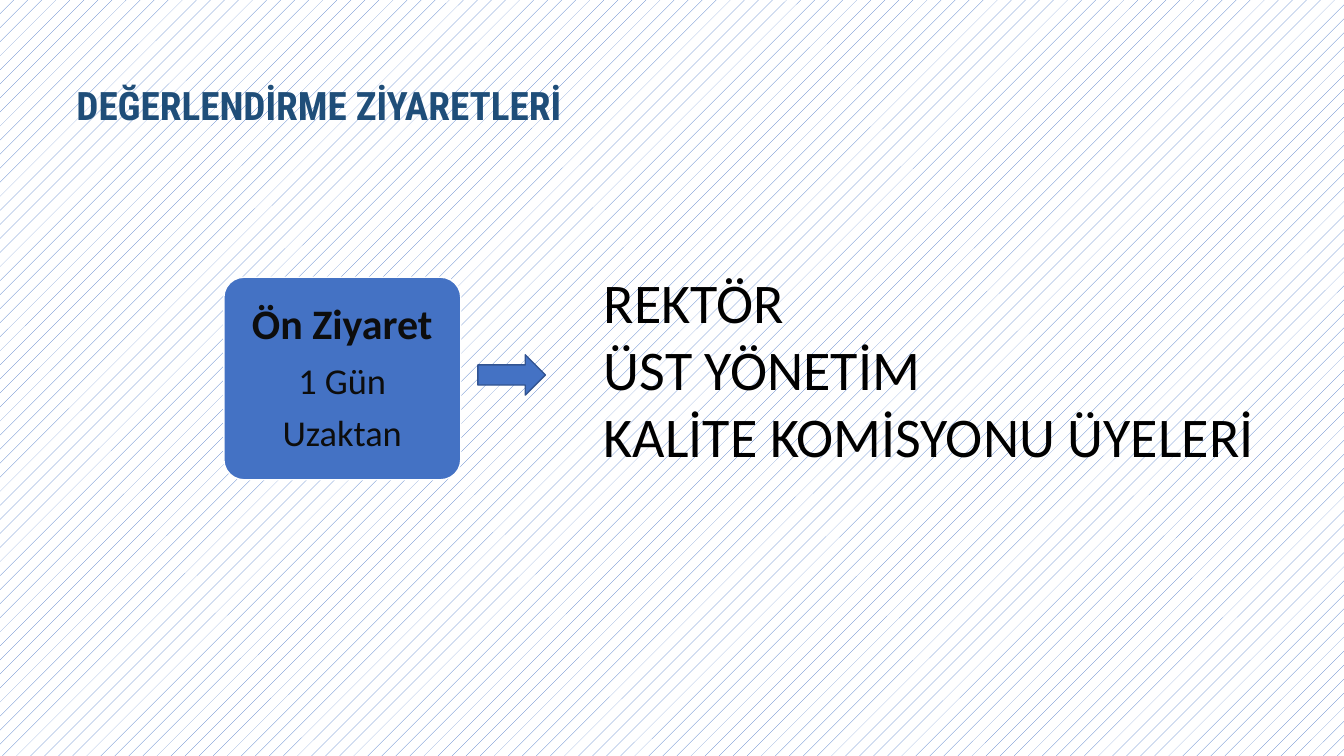
from pptx import Presentation
from pptx import util as u
from pptx.dml.color import RGBColor
from pptx.enum import dml, shapes, text

BLUE, WHITE, BLACK = "4472C4", "FFFFFF", "000000"
NAVY, EDGE, INK = "1F4E79", "325491", "0D0D0D"

TITLE = [("DEĞERLENDİRME ZİYARETLERİ", 28, True)]
VISIT = [("Ön Ziyaret", 30, True), ("1 Gün", 26, False), ("Uzaktan", 26, False)]
ATTENDEES = [(name, 40, False) for name in
             ("REKTÖR", "ÜST YÖNETİM", "KALİTE KOMİSYONU ÜYELERİ")]

TITLE_BOX = (0.66, 0.76, 7.44, 0.57)
VISIT_BOX = (2.22, 2.75, 2.35, 2.01)
ATTENDEES_BOX = (5.89, 2.6, 6.98, 2.12)
ARROW_BOX = (4.74, 3.52, 0.67, 0.4)


def rgb(value):
    return RGBColor.from_string(value)


def inches(box):
    return [u.Inches(length) for length in box]


def write(frame, lines, font, color):
    frame.word_wrap = True
    frame.text = "\n".join(line for line, _, _ in lines)
    for paragraph, (_, size, bold) in zip(frame.paragraphs, lines):
        run = paragraph.runs[0]
        run.font.name = font
        run.font.size = u.Pt(size)
        run.font.bold = bold
        run.font.color.rgb = rgb(color)


def add_text(slide, box, lines, font, color):
    write(slide.shapes.add_textbox(*inches(box)).text_frame, lines, font, color)


def add_block(slide, kind, box, edge):
    block = slide.shapes.add_shape(kind, *inches(box))
    block.shadow.inherit = False
    block.fill.solid()
    block.fill.fore_color.rgb = rgb(BLUE)
    block.line.color.rgb = rgb(edge)
    block.line.width = u.Pt(1)
    return block


def add_visit(slide):
    visit = add_block(slide, shapes.MSO_SHAPE.ROUNDED_RECTANGLE, VISIT_BOX, WHITE)
    visit.adjustments[0] = 0.1
    frame = visit.text_frame
    write(frame, VISIT, "Calibri", INK)
    frame.vertical_anchor = text.MSO_ANCHOR.MIDDLE
    frame.margin_left = frame.margin_right = u.Inches(0.12)
    frame.margin_top = frame.margin_bottom = u.Inches(0.12)
    for paragraph, (_, size, _) in zip(frame.paragraphs, VISIT):
        paragraph.alignment = text.PP_ALIGN.CENTER
        paragraph.line_spacing = 0.9
        paragraph.space_after = u.Pt(round(size * 0.35, 1))


def main():
    deck = Presentation()
    deck.slide_width, deck.slide_height = inches((13.33, 7.5))
    slide = deck.slides.add_slide(deck.slide_layouts[6])

    backdrop = slide.background.fill
    backdrop.patterned()
    backdrop.pattern = dml.MSO_PATTERN.PERCENT_5
    backdrop.fore_color.rgb = rgb(BLUE)
    backdrop.back_color.rgb = rgb(WHITE)

    add_text(slide, TITLE_BOX, TITLE, "Roboto Condensed", NAVY)
    add_visit(slide)
    add_text(slide, ATTENDEES_BOX, ATTENDEES, "Calibri", BLACK)
    add_block(slide, shapes.MSO_SHAPE.RIGHT_ARROW, ARROW_BOX, EDGE)
    deck.save("out.pptx")


if __name__ == "__main__":
    main()
